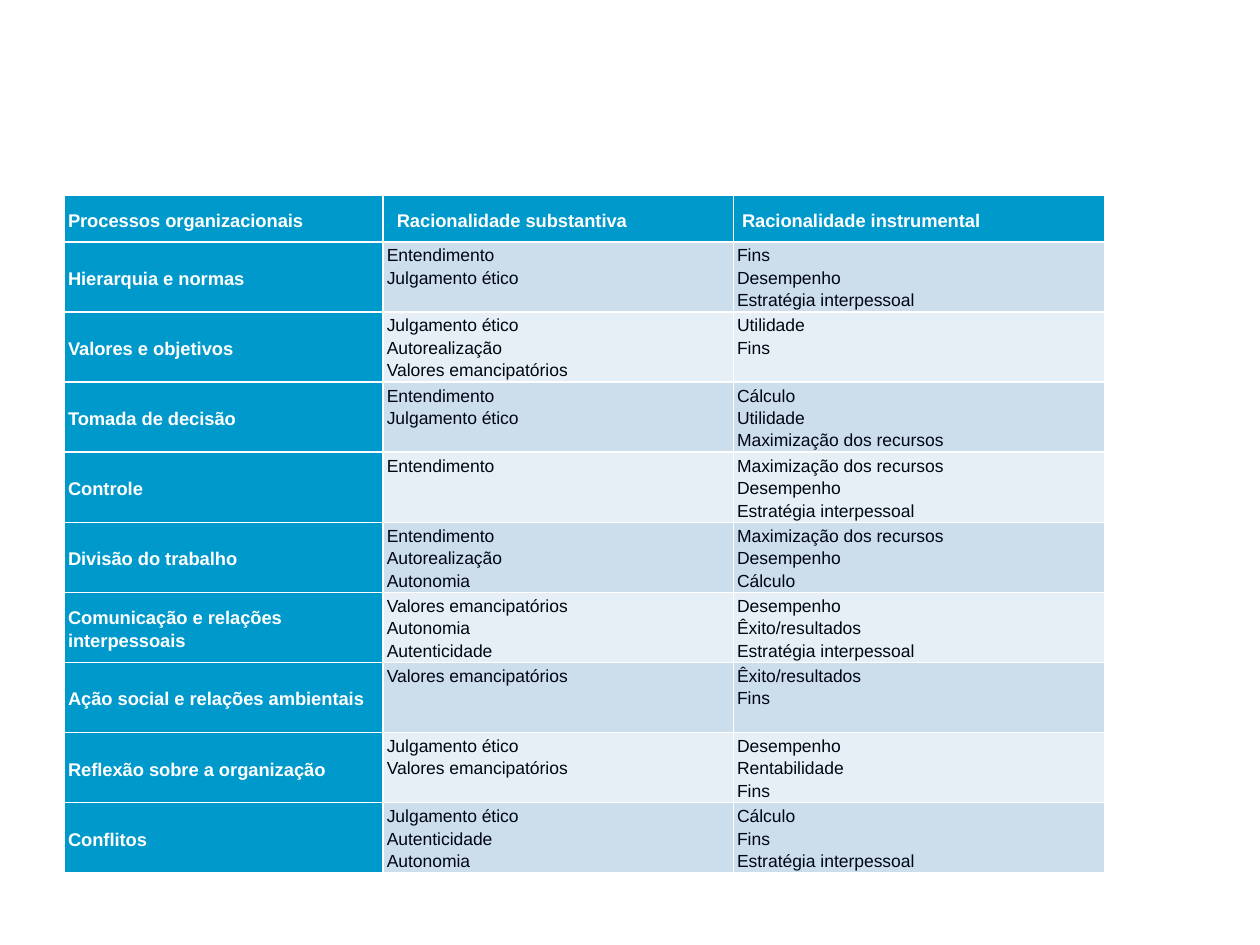
import lxml.etree
import pptx
import pptx.dml.color
import pptx.enum.text
import pptx.oxml.ns
import pptx.util

Inches = pptx.util.Inches
Pt = pptx.util.Pt
ANCHOR = pptx.enum.text.MSO_ANCHOR

HEADING_BLUE = "0099CC"
BANDS = ("CCDEEC", "E7EFF6")
WHITE = "FFFFFF"
INK = "000514"

HEADINGS = ("Processos organizacionais", "Racionalidade substantiva", "Racionalidade instrumental")
HEADING_INDENTS = (0, 0.08, 0.04)
COLUMN_WIDTHS = (2.53, 2.78, 2.95)
HEADING_HEIGHT = 0.37

PROCESSES = (
    ("Hierarquia e normas",
     ("Entendimento", "Julgamento ético"),
     ("Fins", "Desempenho", "Estratégia interpessoal")),
    ("Valores e objetivos",
     ("Julgamento ético", "Autorealização", "Valores emancipatórios"),
     ("Utilidade", "Fins")),
    ("Tomada de decisão",
     ("Entendimento", "Julgamento ético"),
     ("Cálculo", "Utilidade", "Maximização dos recursos")),
    ("Controle",
     ("Entendimento",),
     ("Maximização dos recursos", "Desempenho", "Estratégia interpessoal")),
    ("Divisão do trabalho",
     ("Entendimento", "Autorealização", "Autonomia"),
     ("Maximização dos recursos", "Desempenho", "Cálculo")),
    ("Comunicação e relações interpessoais",
     ("Valores emancipatórios", "Autonomia", "Autenticidade"),
     ("Desempenho", "Êxito/resultados", "Estratégia interpessoal")),
    ("Ação social e relações ambientais",
     ("Valores emancipatórios",),
     ("Êxito/resultados", "Fins")),
    ("Reflexão sobre a organização",
     ("Julgamento ético", "Valores emancipatórios"),
     ("Desempenho", "Rentabilidade", "Fins")),
    ("Conflitos",
     ("Julgamento ético", "Autenticidade", "Autonomia"),
     ("Cálculo", "Fins", "Estratégia interpessoal")),
)


def rgb(hex_colour):
    return pptx.dml.color.RGBColor.from_string(hex_colour)


def write_text(frame, lines, size=10, colour=INK, bold=False):
    frame.word_wrap = True
    for index, line in enumerate(lines):
        paragraph = frame.paragraphs[0] if index == 0 else frame.add_paragraph()
        paragraph.line_spacing = 1.15
        run = paragraph.add_run()
        run.text = line
        run.font.name = "Arial"
        run.font.size = Pt(size)
        run.font.bold = bold
        run.font.color.rgb = rgb(colour)


def add_borders(cell, colour=WHITE, width=1):
    qn = pptx.oxml.ns.qn
    properties = cell._tc.get_or_add_tcPr()
    for position, side in enumerate(("a:lnL", "a:lnR", "a:lnT", "a:lnB")):
        border = lxml.etree.Element(qn(side), w=str(Pt(width)))
        fill = lxml.etree.SubElement(border, qn("a:solidFill"))
        lxml.etree.SubElement(fill, qn("a:srgbClr"), val=colour)
        properties.insert(position, border)


def fill_cell(cell, lines, fill, anchor=ANCHOR.TOP, indent=0, **text_format):
    cell.margin_left = Inches(0.03 + indent)
    cell.margin_right = Inches(0.03)
    cell.margin_top = Inches(0.01)
    cell.margin_bottom = 0
    cell.vertical_anchor = anchor
    add_borders(cell)
    cell.fill.solid()
    cell.fill.fore_color.rgb = rgb(fill)
    write_text(cell.text_frame, lines, **text_format)


def fill_heading(cell, heading, indent=0):
    fill_cell(cell, (heading,), HEADING_BLUE, ANCHOR.MIDDLE, indent,
              size=10.5, colour=WHITE, bold=True)


def add_rationality_table(slide, left, top, width, height):
    table = slide.shapes.add_table(
        len(PROCESSES) + 1, len(HEADINGS),
        Inches(left), Inches(top), Inches(width), Inches(height)).table
    for column, column_width in zip(table.columns, COLUMN_WIDTHS):
        column.width = Inches(column_width)
    process_height = (height - HEADING_HEIGHT) / len(PROCESSES)
    for index, row in enumerate(table.rows):
        row.height = Inches(process_height if index else HEADING_HEIGHT)

    for column, (heading, indent) in enumerate(zip(HEADINGS, HEADING_INDENTS)):
        fill_heading(table.cell(0, column), heading, indent)
    for row, (process, *rationalities) in enumerate(PROCESSES, start=1):
        fill_heading(table.cell(row, 0), process)
        band = BANDS[(row - 1) % 2]
        for column, elements in enumerate(rationalities, start=1):
            fill_cell(table.cell(row, column), elements, band)


def main():
    presentation = pptx.Presentation()
    presentation.slide_width = Inches(10)
    presentation.slide_height = Inches(7.5)
    slide = presentation.slides.add_slide(presentation.slide_layouts[6])
    add_rationality_table(slide, 0.51, 1.55, sum(COLUMN_WIDTHS), 5.38)
    presentation.save("out.pptx")


if __name__ == "__main__":
    main()
